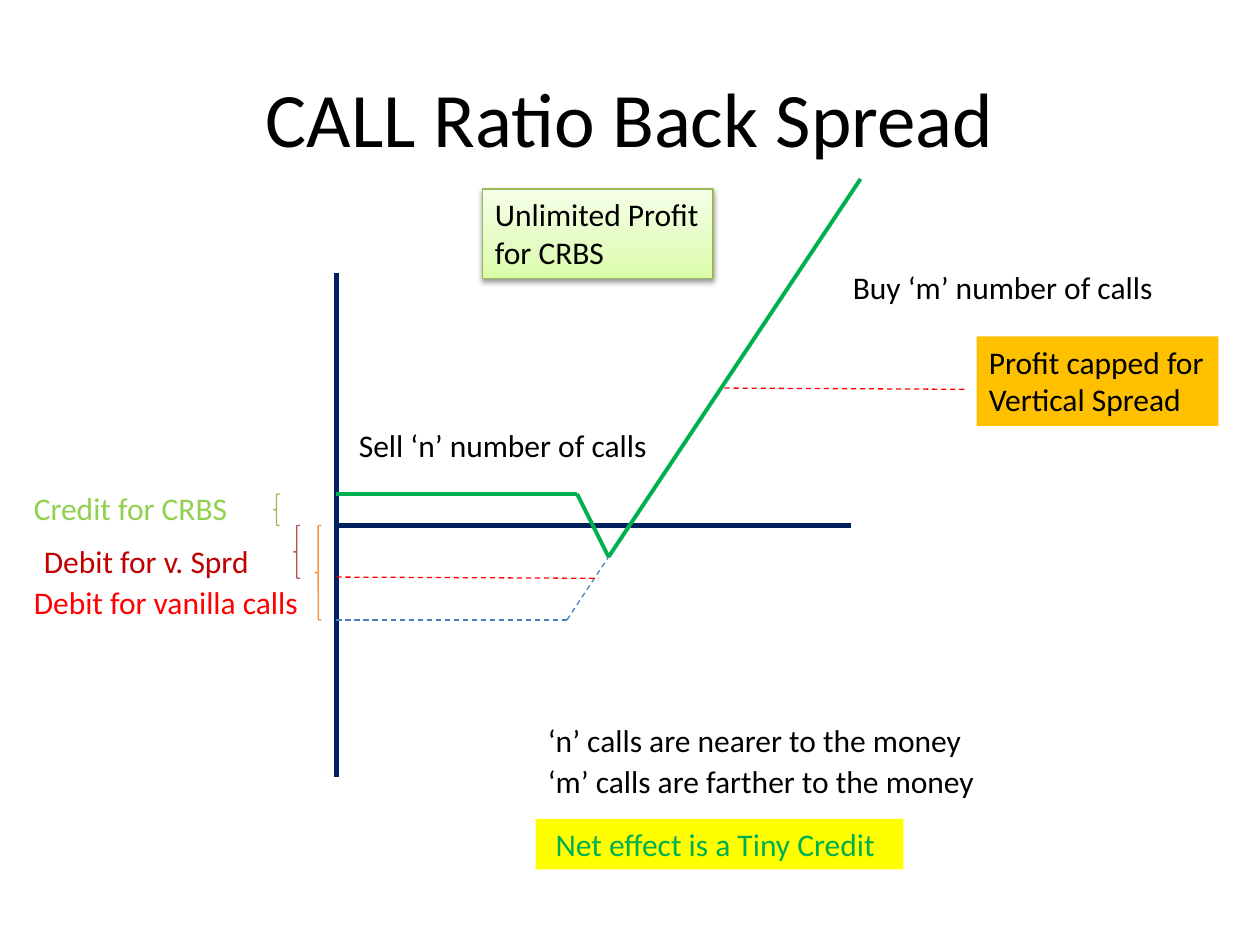
from lxml import etree
from pptx import Presentation
from pptx.dml.color import RGBColor
from pptx.enum import dml, shapes, text
from pptx.oxml import parse_xml
from pptx.oxml.ns import nsdecls, qn
from pptx.util import Inches, Pt

BLACK = RGBColor(0x00, 0x00, 0x00)
NAVY = RGBColor(0x00, 0x20, 0x60)
GREEN = RGBColor(0x00, 0xB0, 0x50)
LIGHT_GREEN = RGBColor(0x92, 0xD0, 0x50)
OLIVE = RGBColor(0x98, 0xB9, 0x55)
BLUE = RGBColor(0x4B, 0x7E, 0xBC)
RED = RGBColor(0xFF, 0x00, 0x00)
DARK_RED = RGBColor(0xC0, 0x00, 0x00)
BRICK = RGBColor(0xBF, 0x4C, 0x48)
ORANGE = RGBColor(0xF6, 0x92, 0x40)
AMBER = RGBColor(0xFF, 0xC0, 0x00)
YELLOW = RGBColor(0xFF, 0xFF, 0x00)
GRADIENT_STOPS = [(0, "DAFDA7"), (35, "E4FCC2"), (100, "F5FFE7")]


def add_text(slide, wording, left, top, width, height=0.4, color=BLACK, size=18):
    box = slide.shapes.add_textbox(Inches(left), Inches(top), Inches(width), Inches(height))
    box.text_frame.word_wrap = True
    box.text_frame.text = wording
    font = box.text_frame.paragraphs[0].runs[0].font
    font.name, font.size, font.color.rgb = "Calibri", Pt(size), color
    return box


def add_line(slide, start, end, color, width, dashed=False):
    line = slide.shapes.add_connector(
        shapes.MSO_CONNECTOR.STRAIGHT, *(Inches(value) for value in (*start, *end)))
    line.line.color.rgb = color
    line.line.width = Pt(width)
    if dashed:
        line.line.dash_style = dml.MSO_LINE.DASH
    etree.SubElement(line._element.spPr, qn("a:effectLst"))


def add_brace(slide, left, top, height, color):
    brace = slide.shapes.add_shape(
        shapes.MSO_SHAPE.LEFT_BRACE, Inches(left), Inches(top), Inches(0.05), Inches(height))
    brace.shadow.inherit = False
    brace.fill.background()
    brace.line.color.rgb = color
    brace.line.width = Pt(0.75)


def add_title(slide, left, top, width, height):
    title = add_text(slide, "CALL Ratio Back Spread", left, top, width, height, size=44)
    title.text_frame.vertical_anchor = text.MSO_ANCHOR.MIDDLE
    title.text_frame.paragraphs[0].alignment = text.PP_ALIGN.CENTER


def add_payoff_diagram(slide, left, top):
    """Draw axes and payoff lines; left, top is where the axes cross."""
    def at(x, y):
        return left + x, top + y

    credit, valley, debit_bend = at(1.91, -0.25), at(2.16, 0.25), at(1.83, 0.75)
    for start, end in [(at(0, 0), at(4.08, 0)), (at(0, -2), at(0, 2))]:
        add_line(slide, start, end, NAVY, 3)
    for start, end, color in [
        (at(0, 0.75), debit_bend, BLUE),
        (debit_bend, valley, BLUE),
        (at(0, 0.41), at(2.08, 0.42), RED),
        (at(3.08, -1.09), at(5, -1.08), RED),
    ]:
        add_line(slide, start, end, color, 0.75, dashed=True)
    payoff = [at(0, -0.25), credit, valley, at(4.16, -2.75)]
    for start, end in zip(payoff, payoff[1:]):
        add_line(slide, start, end, GREEN, 2.25)
    add_text(slide, "Sell ‘n’ number of calls", *at(0.08, -0.84), 2.75)
    add_text(slide, "Buy ‘m’ number of calls", *at(4, -2.09), 2.75)


def add_cost_labels(slide, left, top):
    """Label credit and debits with braces; top is the level of the zero axis."""
    add_text(slide, "Credit for CRBS", left, top - 0.34, 2, color=LIGHT_GREEN)
    add_text(slide, "Debit for v. Sprd", left + 0.08, top + 0.08, 1.83, color=DARK_RED)
    add_text(slide, "Debit for vanilla calls", left, top + 0.41, 2.33, color=RED)
    add_brace(slide, left + 2, top - 0.25, 0.25, OLIVE)
    add_brace(slide, left + 2.16, top, 0.42, BRICK)
    add_brace(slide, left + 2.33, top, 0.75, ORANGE)


def add_capped_profit(slide, left, top, width, height):
    box = add_text(slide, "Profit capped for Vertical Spread", left, top, width, height)
    box.fill.solid()
    box.fill.fore_color.rgb = AMBER


def add_unlimited_profit(slide, left, top, width, height):
    box = add_text(slide, "Unlimited Profit for CRBS", left, top, width, height)
    box.line.color.rgb = OLIVE
    box.line.width = Pt(0.75)
    box.fill.background()
    properties = box._element.spPr
    stops = "".join(
        f'<a:gs pos="{position * 1000}"><a:srgbClr val="{color}"/></a:gs>'
        for position, color in GRADIENT_STOPS)
    gradient = parse_xml(
        f'<a:gradFill {nsdecls("a")} rotWithShape="1"><a:gsLst>{stops}</a:gsLst>'
        '<a:lin ang="16200000" scaled="0"/></a:gradFill>')
    properties.replace(properties.find(qn("a:noFill")), gradient)
    properties.append(parse_xml(
        f'<a:effectLst {nsdecls("a")}><a:outerShdw blurRad="{Pt(3.1)}" dist="{Pt(1.6)}" '
        'dir="5400000" rotWithShape="0"><a:srgbClr val="000000"><a:alpha val="38000"/>'
        '</a:srgbClr></a:outerShdw></a:effectLst>'))


def add_conclusions(slide, left, top):
    add_text(slide, "‘n’ calls are nearer to the money", left, top, 3.58)
    add_text(slide, "‘m’ calls are farther to the money", left, top + 0.33, 4)
    result = add_text(slide, "Net effect is a Tiny Credit", left, top + 0.83, 2.92, color=GREEN)
    result.text_frame.margin_left = Inches(0.16)
    result.fill.solid()
    result.fill.fore_color.rgb = YELLOW


def main():
    presentation = Presentation()
    presentation.slide_width = Inches(10)
    presentation.slide_height = Inches(7.5)
    slide = presentation.slides.add_slide(presentation.slide_layouts[6])
    add_title(slide, 0.5, 0.3, 9, 1.25)
    add_payoff_diagram(slide, 2.67, 4.17)
    add_cost_labels(slide, 0.17, 4.17)
    add_capped_profit(slide, 7.75, 2.67, 1.92, 0.71)
    add_unlimited_profit(slide, 3.83, 1.5, 1.83, 0.71)
    add_conclusions(slide, 4.25, 5.67)
    presentation.save("out.pptx")


if __name__ == "__main__":
    main()
